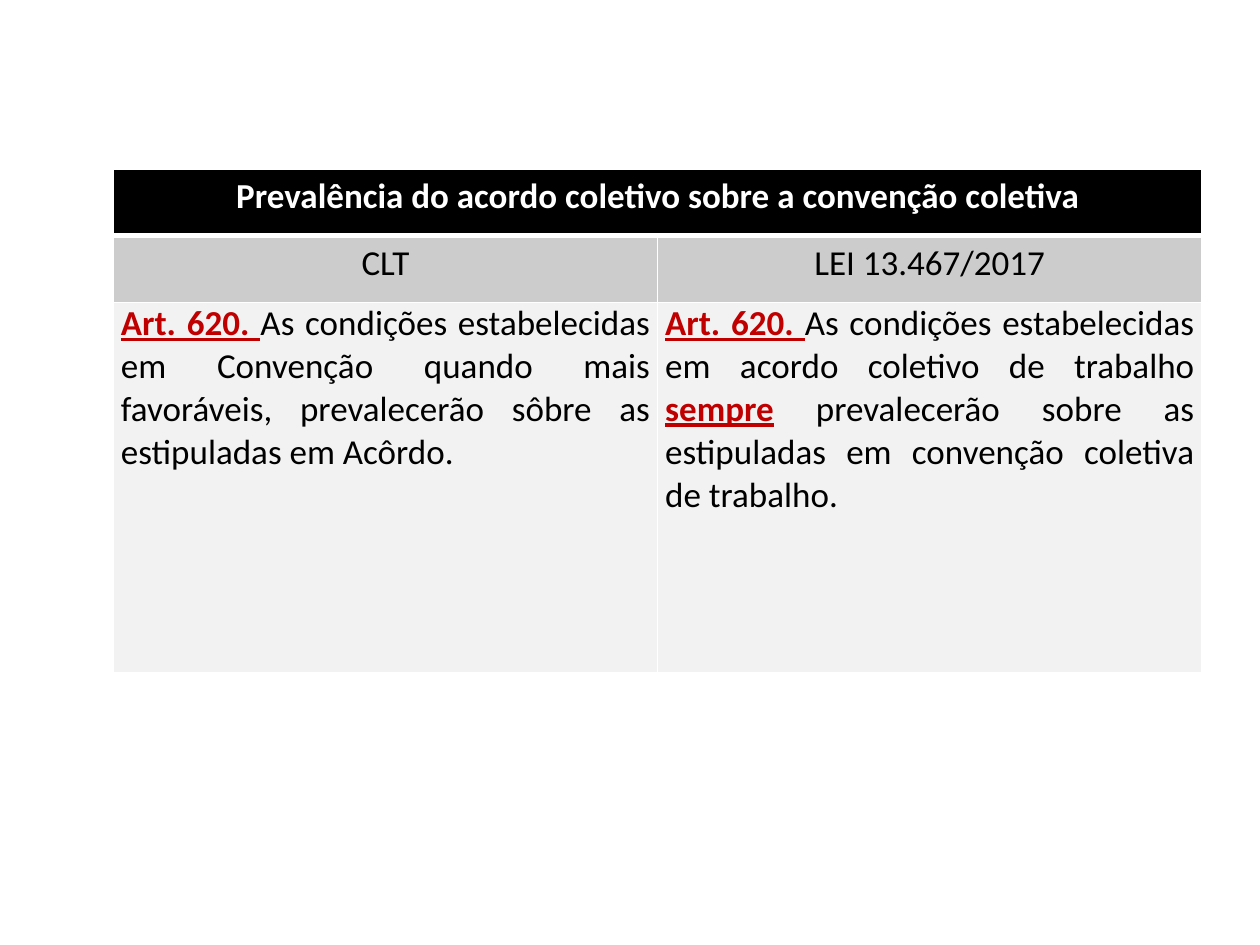
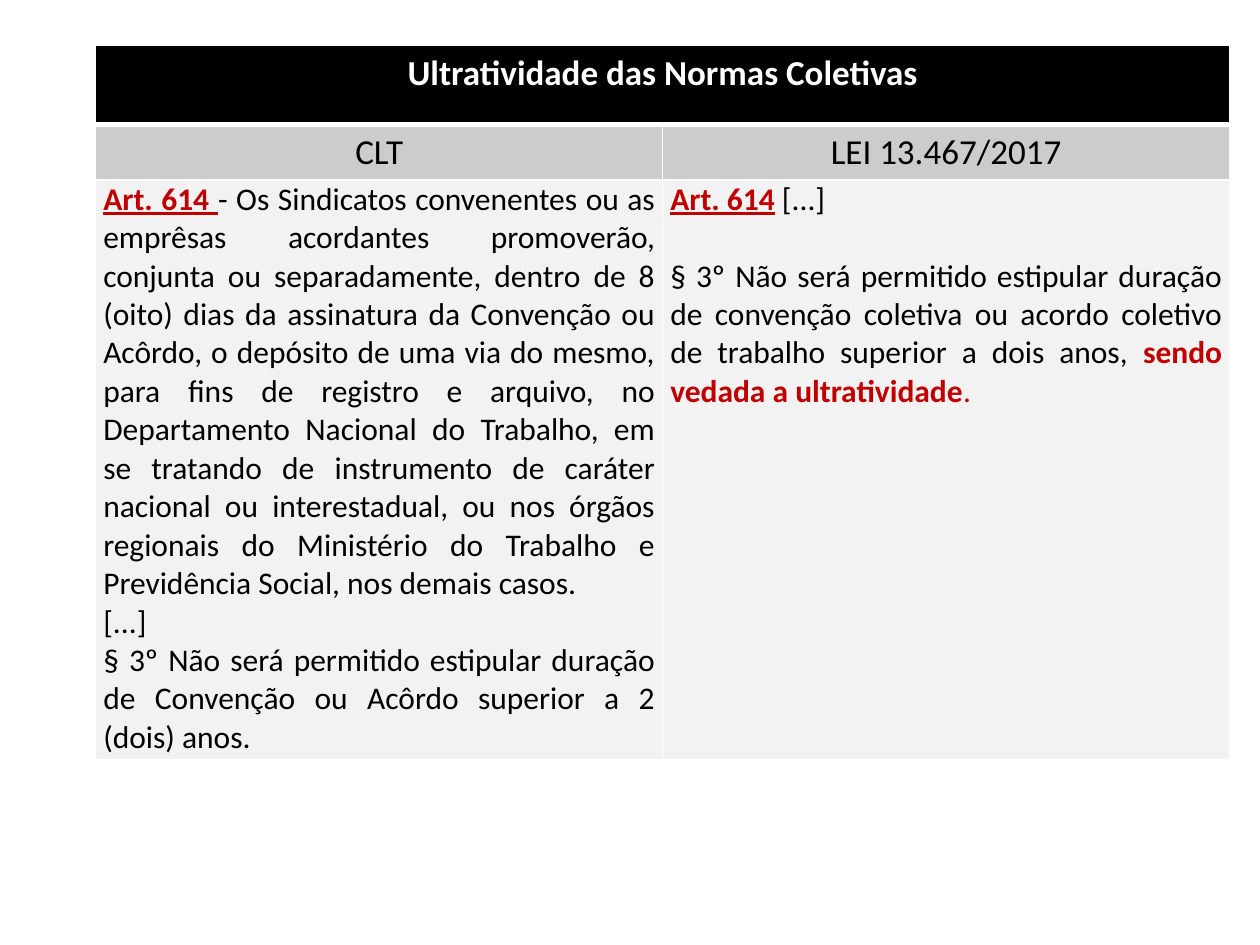
from lxml import etree
from pptx import Presentation
from pptx.dml.color import RGBColor
from pptx.enum.text import PP_ALIGN
from pptx.oxml.ns import qn
from pptx.util import Emu, Pt

CENTER, JUSTIFY = PP_ALIGN.CENTER, PP_ALIGN.JUSTIFY
SCALE = 9144  # EMU per px, 100 px to the inch
FONT = "Calibri"
COLORS = {"head": "000000", "sub": "CCCCCC", "body": "F2F2F2",
          "line": "FFFFFF", "light": "FFFFFF", "text": "000000", "mark": "C00000"}
# Run styles: colour, bold, underline
STYLES = {"title": ("light", True, False), "plain": ("text", False, False),
          "key": ("mark", True, True), "bold": ("mark", True, False),
          "red": ("mark", False, False)}
LAWS = ("CLT", "LEI 13.467/2017")


def px(size):
    return Emu(size * SCALE)


class Deck:
    def __init__(self, wide, high):
        self.prs = Presentation()
        self.prs.slide_width, self.prs.slide_height = px(wide), px(high)
        self.slide = None

    def page(self):
        self.slide = self.prs.slides.add_slide(self.prs.slide_layouts[6])

    def edge(self, cell, row):
        """White cell borders, with a thicker rule below the heading."""
        props = cell._tc.get_or_add_tcPr()
        widths = {"lnL": 1, "lnR": 1, "lnT": 3 if row == 1 else 1,
                  "lnB": 3 if row == 0 else 1}
        for spot, (name, width) in enumerate(widths.items()):
            line = etree.Element(qn("a:" + name), w=str(Pt(width)))
            fill = etree.SubElement(line, qn("a:solidFill"))
            etree.SubElement(fill, qn("a:srgbClr"), val=COLORS["line"])
            props.insert(spot, line)

    def box(self, cell, row, tone):
        cell.margin_left = cell.margin_right = px(6)
        cell.margin_top = cell.margin_bottom = 0
        cell.fill.solid()
        cell.fill.fore_color.rgb = RGBColor.from_string(COLORS[tone])
        self.edge(cell, row)

    def text(self, cell, paras, size, align, space=1.0, gap=0):
        frame = cell.text_frame
        for i, parts in enumerate(paras):
            para = frame.add_paragraph() if i else frame.paragraphs[0]
            para.alignment, para.line_spacing = align, space
            if i and gap:
                para.space_before = Pt(gap)
            for words, style in parts:
                run = para.add_run()
                run.text = words
                tone, bold, under = STYLES[style]
                font = run.font
                font.name, font.size = FONT, Pt(size)
                font.bold, font.underline = bold, under
                font.color.rgb = RGBColor.from_string(COLORS[tone])

    def table(self, left, top, width, rows, title, texts, size, gaps=(0, 0)):
        frame = self.slide.shapes.add_table(
            3, 2, px(left), px(top), px(width), px(sum(rows)))
        grid = frame.table
        grid.first_row = grid.horz_banding = False
        for col in grid.columns:
            col.width = px(width // 2)
        for r, (high, tone) in enumerate(zip(rows, ("head", "sub", "body"))):
            grid.rows[r].height = px(high)
            for c in range(2):
                self.box(grid.cell(r, c), r, tone)
        # Heading across both columns
        grid.cell(0, 0).merge(grid.cell(0, 1))
        self.text(grid.cell(0, 0), [[(title, "title")]], 20, CENTER, 1.15)
        # Old law beside new law
        for c, (law, paras, gap) in enumerate(zip(LAWS, texts, gaps)):
            self.text(grid.cell(1, c), [[(law, "plain")]], 20, CENTER, 1.15)
            self.text(grid.cell(2, c), paras, size, JUSTIFY, gap=gap)


def main():
    deck = Deck(1000, 750)

    # Agreement over convention
    deck.page()
    old = [[("Art. 620. ", "key"),
            ("As condições estabelecidas em Convenção quando mais favoráveis, "
             "prevalecerão sôbre as estipuladas em Acôrdo.", "plain")]]
    new = [[("Art. 620. ", "key"),
            ("As condições estabelecidas em acordo coletivo de trabalho ", "plain"),
            ("sempre", "key"),
            (" prevalecerão sobre as estipuladas em convenção coletiva "
             "de trabalho.", "plain")]]
    deck.table(90, 134, 864, (53, 53, 294),
               "Prevalência do acordo coletivo sobre a convenção coletiva",
               (old, new), 20)

    # Term of collective norms
    deck.page()
    old = [[("Art. 614 ", "key"),
            ("- Os Sindicatos convenentes ou as emprêsas acordantes promoverão, "
             "conjunta ou separadamente, dentro de 8 (oito) dias da assinatura da "
             "Convenção ou Acôrdo, o depósito de uma via do mesmo, para fins de "
             "registro e arquivo, no Departamento Nacional do Trabalho, em se "
             "tratando de instrumento de caráter nacional ou interestadual, ou nos "
             "órgãos regionais do Ministério do Trabalho e Previdência Social, nos "
             "demais casos.", "plain")],
           [("[...]", "plain")],
           [("§ 3º Não será permitido estipular duração de Convenção ou Acôrdo "
             "superior a 2 (dois) anos.", "plain")]]
    new = [[("Art. 614", "key"), (" [...]", "plain")],
           [("§ 3º Não será permitido estipular duração de convenção coletiva ou "
             "acordo coletivo de trabalho superior a dois anos, ", "plain"),
            ("sendo vedada a ultratividade", "bold"), (".", "red")]]
    deck.table(76, 36, 900, (63, 44, 460), "Ultratividade das Normas Coletivas",
               (old, new), 18, gaps=(0, 22))

    deck.prs.save("out.pptx")


if __name__ == "__main__":
    main()
